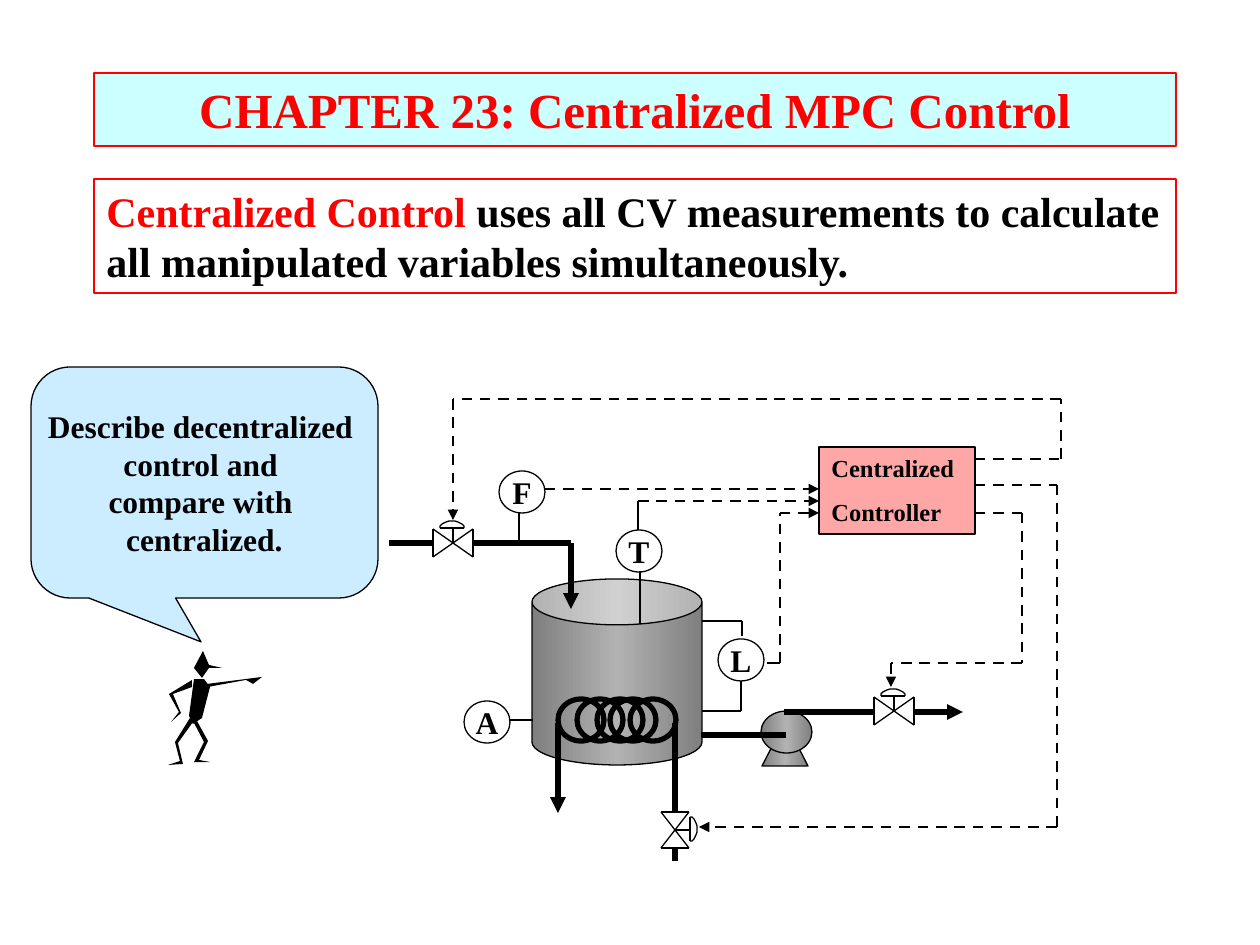
from copy import deepcopy
from dataclasses import dataclass
from math import cos, pi, sin

from lxml import etree
from pptx import Presentation
from pptx.dml.color import RGBColor
from pptx.enum.dml import MSO_LINE
from pptx.enum.shapes import MSO_CONNECTOR, MSO_SHAPE
from pptx.enum.text import MSO_ANCHOR, PP_ALIGN
from pptx.oxml.ns import qn
from pptx.util import Pt

PX = 914400 / 126
STRAIGHT = MSO_CONNECTOR.STRAIGHT
DASH = MSO_LINE.DASH
RECTANGLE, OVAL, CAN = MSO_SHAPE.RECTANGLE, MSO_SHAPE.OVAL, MSO_SHAPE.CAN
COIL_LOOP = MSO_SHAPE.FLOWCHART_CONNECTOR
PUMP_FOOT = MSO_SHAPE.FLOWCHART_MANUAL_OPERATION
CALLOUT = MSO_SHAPE.ROUNDED_RECTANGULAR_CALLOUT
TOP, MIDDLE = MSO_ANCHOR.TOP, MSO_ANCHOR.MIDDLE
LEFT, CENTER = PP_ALIGN.LEFT, PP_ALIGN.CENTER


@dataclass(frozen=True)
class Theme:
    font: str = "Times New Roman"
    ink: str = "000000"
    accent: str = "FF0000"
    title_fill: str = "CCFFFF"
    callout_fill: str = "CCECFF"
    controller_fill: str = "FFA7A7"
    metal: tuple = ("7F7F7F", "B2B2B2", "7F7F7F")
    title_size: int = 28
    body_size: int = 24
    label_size: int = 18
    controller_size: int = 14
    thin: float = 0.75
    signal: float = 1.5
    pipe: float = 3


THEME = Theme()


def emu(*lengths):
    return [round(length * PX) for length in lengths]


def paint(shape, fill=None, line=THEME.ink, weight=THEME.thin):
    shape.shadow.inherit = False
    if fill is None:
        shape.fill.background()
    elif isinstance(fill, tuple):
        shape.fill.gradient()
        shape.fill.gradient_angle = 0
        first_stop = shape._element.spPr.find(".//" + qn("a:gs"))
        first_stop.addnext(deepcopy(first_stop))
        for index, (stop, color) in enumerate(zip(shape.fill.gradient_stops, fill)):
            stop.position = index / 2
            stop.color.rgb = RGBColor.from_string(color)
    else:
        shape.fill.solid()
        shape.fill.fore_color.rgb = RGBColor.from_string(fill)
    if line is None:
        shape.line.fill.background()
    else:
        shape.line.color.rgb = RGBColor.from_string(line)
        shape.line.width = Pt(weight)


def add_part(slide, kind, box, **style):
    part = slide.shapes.add_shape(kind, *emu(*box))
    paint(part, **style)
    return part


def write(shape, paragraphs, size, align=CENTER, anchor=MIDDLE, wrap=True, gap=0):
    frame = shape.text_frame
    frame.word_wrap = wrap
    frame.vertical_anchor = anchor
    for index, runs in enumerate(paragraphs):
        paragraph = frame.add_paragraph() if index else frame.paragraphs[0]
        paragraph.alignment = align
        paragraph.space_before = Pt(gap if index else 0)
        paragraph.font.name = THEME.font
        paragraph.font.size = Pt(size)
        paragraph.font.bold = True
        for text, color in runs:
            run = paragraph.add_run()
            run.text = text
            run.font.color.rgb = RGBColor.from_string(color)


def add_outline(slide, points, closed, **style):
    builder = slide.shapes.build_freeform(*points[0], scale=PX)
    builder.add_line_segments(points[1:], close=closed)
    paint(builder.convert_to_shape(), **style)


def add_route(slide, points, weight=THEME.thin, dash=None, arrow=False):
    last = len(points) - 2
    for index, (start, end) in enumerate(zip(points, points[1:])):
        segment = slide.shapes.add_connector(STRAIGHT, *emu(*start, *end))
        segment.line.color.rgb = RGBColor.from_string(THEME.ink)
        segment.line.width = Pt(weight)
        if dash is not None:
            segment.line.dash_style = dash
        properties = segment._element.spPr
        if arrow and index == last:
            etree.SubElement(properties.find(qn("a:ln")), qn("a:tailEnd"), type="triangle")
        etree.SubElement(properties, qn("a:effectLst"))


def add_valve(slide, x, y, half=20, upright=False):
    def place(along, across):
        return (x - across, y + along) if upright else (x + along, y + across)

    for side in (-half, half):
        add_route(slide, [place(side, 14), place(side, -14)])
        add_route(slide, [place(side, -14), place(-side, 14)])
    add_route(slide, [place(0, 0), place(0, -15)])
    add_route(slide, [place(-13, -15), place(11, -15)])
    dome = [place(12 * cos(pi * step / 12) - 1, -15 - 7 * sin(pi * step / 12))
            for step in range(13)]
    add_outline(slide, dome, False)


def add_instrument(slide, letter, x, y):
    bubble = add_part(slide, OVAL, (x, y, 46, 42))
    write(bubble, [[(letter, THEME.ink)]], THEME.label_size, wrap=False)


def add_headings(slide):
    title = add_part(slide, RECTANGLE, (94, 73, 1082, 73),
                     fill=THEME.title_fill, line=THEME.accent)
    write(title, [[("CHAPTER 23: Centralized MPC Control", THEME.accent)]],
          THEME.title_size, anchor=TOP)
    definition = add_part(slide, RECTANGLE, (94, 179, 1082, 114), line=THEME.accent)
    write(definition, [[
        ("Centralized Control", THEME.accent),
        (" uses all CV measurements to calculate all manipulated variables simultaneously.",
         THEME.ink),
    ]], THEME.body_size, LEFT, TOP)


def add_process(slide):
    tank = add_part(slide, CAN, (532, 579, 170, 186), fill=THEME.metal)
    tank.adjustments[0] = 0.27
    foot = add_part(slide, PUMP_FOOT, (762, 748, 46, 18), fill=THEME.metal)
    foot.rotation = 180
    for x in (577, 558, 597, 610, 630):
        add_part(slide, COIL_LOOP, (x, 699, 46, 42), weight=THEME.pipe)
    add_part(slide, OVAL, (761, 711, 51, 42), fill=THEME.metal)
    add_valve(slide, 675, 830, 18, True)
    add_valve(slide, 894, 711)
    add_valve(slide, 453, 543)
    for points, arrow in [
        ([(389, 543), (433, 543)], False),
        ([(473, 543), (571, 543), (571, 609)], True),
        ([(558, 723), (558, 813)], True),
        ([(675, 723), (675, 813)], False),
        ([(675, 849), (675, 861)], False),
        ([(701, 735), (786, 735)], False),
        ([(784, 712), (873, 712)], False),
        ([(915, 712), (963, 712)], True),
    ]:
        add_route(slide, points, THEME.pipe, arrow=arrow)


def add_control(slide):
    for letter, x, y in [("L", 718, 639), ("F", 499, 471), ("T", 616, 530), ("A", 464, 701)]:
        add_instrument(slide, letter, x, y)
    for points in [
        [(741, 681), (741, 711), (702, 711)], [(742, 636), (742, 621), (702, 621)],
        [(767, 663), (780, 663)], [(519, 513), (519, 543)],
        [(509, 720), (533, 720)], [(640, 571), (640, 624)],
    ]:
        add_route(slide, points)
    controller = add_part(slide, RECTANGLE, (819, 447, 156, 87), fill=THEME.controller_fill)
    write(controller, [[("Centralized", THEME.ink)], [("Controller", THEME.ink)]],
          THEME.controller_size, LEFT, TOP, gap=8)
    for points in [
        [(545, 489), (819, 489)],
        [(638, 501), (819, 501)],
        [(780, 663), (780, 513), (819, 513)],
        [(975, 485), (1057, 485), (1057, 827), (699, 827)],
        [(975, 513), (1022, 513), (1022, 663), (891, 663), (891, 687)],
        [(975, 459), (1061, 459), (1061, 399), (453, 399), (453, 520)],
    ]:
        add_route(slide, points, THEME.signal, DASH, True)
    add_route(slide, [(638, 501), (638, 530)], THEME.signal)


def add_figure(slide):
    head = [(203, 651), (209, 665), (222, 668), (209, 668), (202, 678), (194, 668)]
    pointing_arm = [(207, 684), (262, 677), (253, 684), (246, 680), (208, 687)]
    torso = [(194, 679), (204, 679), (210, 687), (202, 718), (193, 724), (189, 716)]
    bent_arm = [(192, 680), (192, 687), (173, 694), (181, 713), (171, 722),
                (179, 712), (169, 694)]
    front_leg = [(197, 721), (208, 741), (199, 760), (210, 762), (194, 762),
                 (204, 742), (194, 723)]
    back_leg = [(190, 718), (193, 722), (178, 743), (183, 764), (168, 765),
                (180, 761), (175, 742)]
    for limb in (head, pointing_arm, torso, bent_arm, front_leg, back_leg):
        add_outline(slide, limb, True, fill=THEME.ink, line=None)


def add_speech(slide):
    speech = add_part(slide, CALLOUT, (31, 367, 347, 231), fill=THEME.callout_fill)
    for index, value in enumerate((-0.01, 0.69, 0.17)):
        speech.adjustments[index] = value
    lines = ["Describe decentralized ", "control and ", "compare with ", "centralized."]
    write(speech, [[(line, THEME.ink)] for line in lines], THEME.label_size, wrap=False)


def main():
    deck = Presentation()
    deck.slide_width, deck.slide_height = emu(1260, 945)
    slide = deck.slides.add_slide(deck.slide_layouts[6])
    add_process(slide)
    add_control(slide)
    add_headings(slide)
    add_figure(slide)
    add_speech(slide)
    deck.save("out.pptx")


if __name__ == "__main__":
    main()
